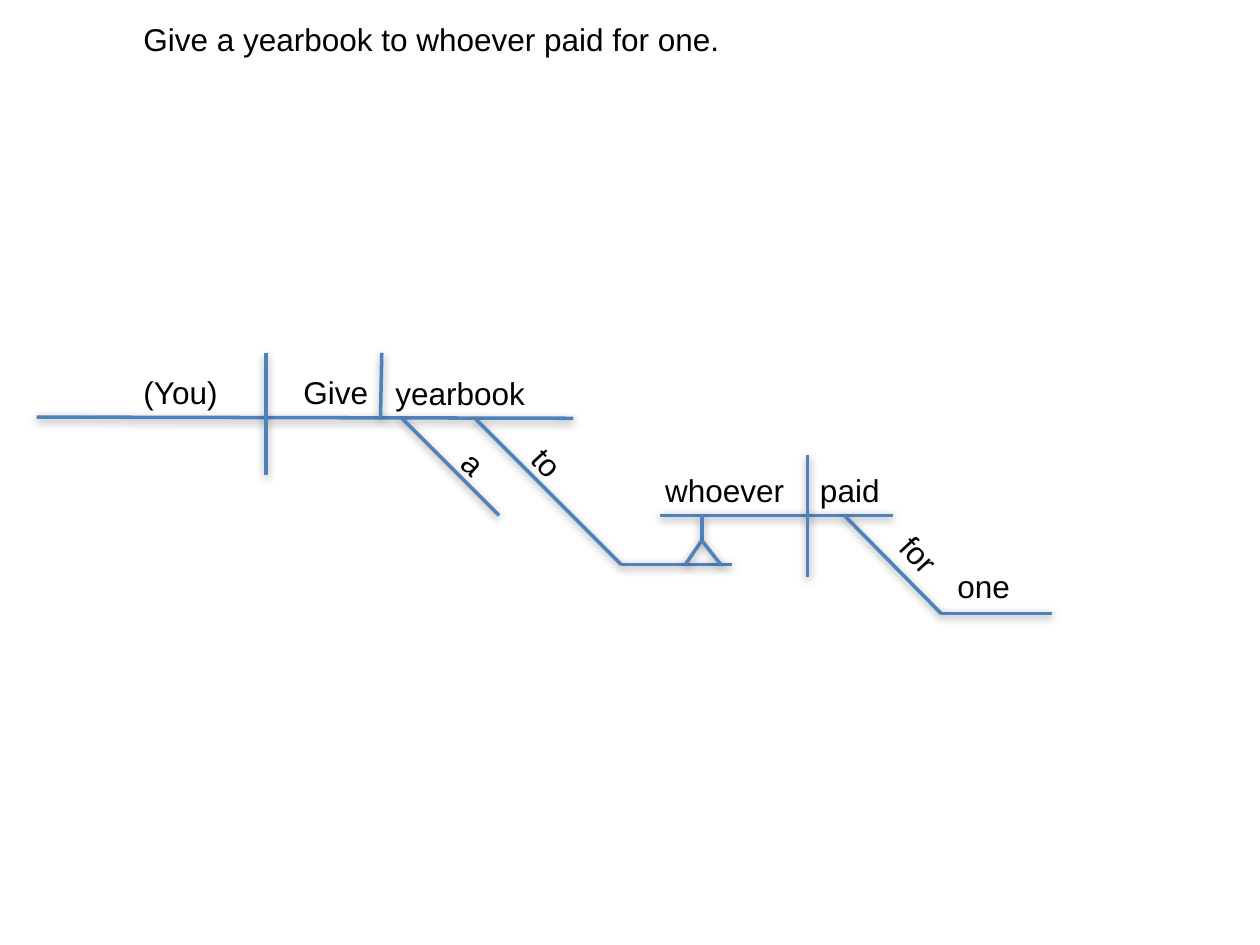
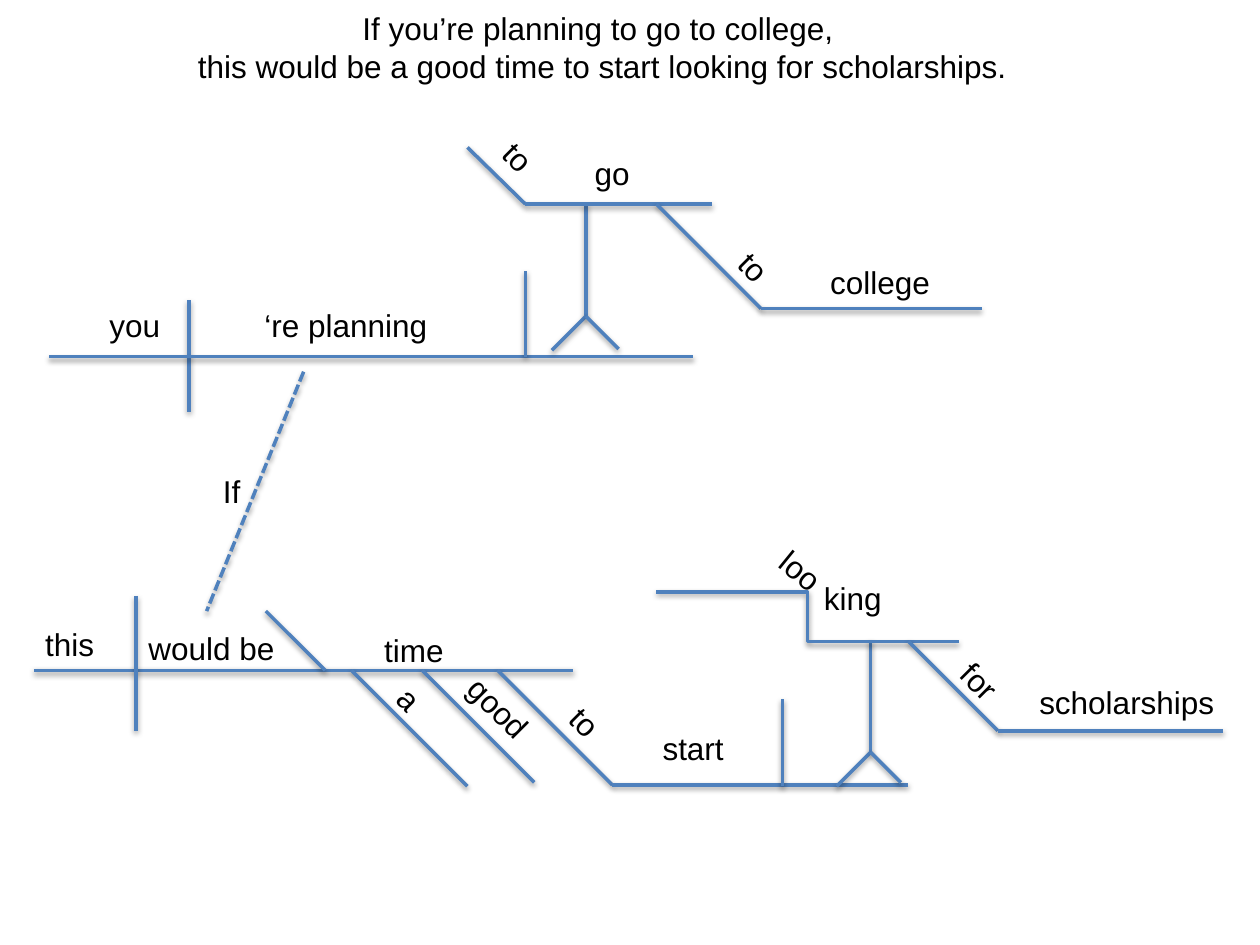
from itertools import pairwise

from lxml.etree import SubElement
from pptx import Presentation
from pptx.dml.color import RGBColor
from pptx.enum.dml import MSO_LINE
from pptx.enum.shapes import MSO_CONNECTOR
from pptx.enum.text import MSO_AUTO_SIZE, PP_ALIGN
from pptx.oxml.ns import qn
from pptx.util import Inches, Pt

# Shared look
FONT = "Arial"
SIZE = 18
INK = "000000"
BLUE = "4F81BD"
WEIGHT = 2
TALL = 0.4  # height of a one-line word box
SLANT = 45  # tilt of words on slanted lines


def color(code):
    return RGBColor.from_string(code)


def add_shade(link, blur):
    """Give a connector a soft shadow straight below it."""
    effects = SubElement(link._element.spPr, qn("a:effectLst"))
    shade = SubElement(effects, qn("a:outerShdw"), blurRad=str(Pt(blur)),
                       dist=str(Pt(1.6)), dir="5400000", rotWithShape="0")
    tint = SubElement(shade, qn("a:srgbClr"), val=INK)
    SubElement(tint, qn("a:alpha"), val="38000")


def add_line(slide, blur, start, end, kind=MSO_CONNECTOR.STRAIGHT, dash=None):
    ends = [Inches(n) for n in (*start, *end)]
    link = slide.shapes.add_connector(kind, *ends)
    link.line.color.rgb = color(BLUE)
    link.line.width = Pt(WEIGHT)
    if dash:
        link.line.dash_style = dash
    add_shade(link, blur)


def add_route(slide, blur, *points):
    """Join points in turn with straight lines."""
    for start, end in pairwise(points):
        add_line(slide, blur, start, end)


def add_stand(slide, blur, top, fork, left, right):
    """Draw a stem that splits into two feet."""
    add_route(slide, blur, top, fork, left)
    add_line(slide, blur, fork, right)


def add_text(slide, lines, x, y, wide, tall=TALL, tilt=0, align=PP_ALIGN.LEFT):
    box = slide.shapes.add_textbox(*map(Inches, (x, y, wide, tall)))
    box.rotation = tilt
    frame = box.text_frame
    frame.word_wrap = False
    frame.auto_size = MSO_AUTO_SIZE.SHAPE_TO_FIT_TEXT
    for i, text in enumerate(lines):
        para = frame.add_paragraph() if i else frame.paragraphs[0]
        para.alignment = align
        run = para.add_run()
        run.text = text
        run.font.name = FONT
        run.font.size = Pt(SIZE)
        run.font.color.rgb = color(INK)


def add_words(slide, words):
    """Place words given as text, left, top, width and, if any, tilt."""
    for text, x, y, wide, *tilt in words:
        add_text(slide, [text], x, y, wide, tilt=tilt[0] if tilt else 0)


def draw_gift(slide):
    blur = 5
    add_text(slide, ["Give a yearbook to whoever paid for one."], 1.04, 0.11, 4.82)

    # Main clause
    add_route(slide, blur, (0.29, 3.31), (4.55, 3.32))
    add_route(slide, blur, (2.11, 2.8), (2.11, 3.77))
    add_route(slide, blur, (3.03, 2.8), (3.02, 3.32))
    add_route(slide, blur, (3.19, 3.32), (3.96, 4.09))
    add_route(slide, blur, (3.77, 3.32), (4.93, 4.48), (5.81, 4.48))

    # Noun clause on its stand
    add_route(slide, blur, (5.24, 4.09), (7.09, 4.09))
    add_route(slide, blur, (6.41, 3.61), (6.41, 4.58))
    add_route(slide, blur, (6.7, 4.09), (7.47, 4.87), (8.35, 4.87))
    add_stand(slide, blur, (5.57, 4.09), (5.57, 4.29), (5.44, 4.48), (5.72, 4.48))

    add_words(slide, [
        ("(You)", 1.04, 2.91, 0.81),
        ("Give", 2.31, 2.91, 0.72),
        ("yearbook", 3.04, 2.92, 1.23),
        ("a", 3.59, 3.48, 0.34, 42.5),
        ("to", 4.14, 3.47, 0.41, 47.1),
        ("whoever", 5.18, 3.69, 1.15),
        ("paid", 6.41, 3.69, 0.67),
        ("for", 7.05, 4.2, 0.49, 47.1),
        ("one", 7.5, 4.45, 0.62),
    ])


def draw_college(slide):
    blur = 3.1

    # Main clause
    add_route(slide, blur, (0.27, 5.32), (4.55, 5.32))
    add_route(slide, blur, (1.08, 4.73), (1.08, 5.8))
    add_route(slide, blur, (2.11, 4.85), (2.58, 5.32))
    add_route(slide, blur, (2.79, 5.32), (3.71, 6.24))
    add_route(slide, blur, (3.35, 5.32), (4.24, 6.21))

    # Phrase "to start" with its gerund
    add_route(slide, blur, (3.95, 5.32), (4.86, 6.23), (7.21, 6.23))
    add_route(slide, blur, (6.21, 6.24), (6.21, 5.55))
    add_stand(slide, blur, (6.91, 5.08), (6.91, 5.97), (6.64, 6.24), (7.15, 6.21))
    add_line(slide, blur, (5.21, 4.7), (7.61, 5.09), MSO_CONNECTOR.ELBOW)
    add_route(slide, blur, (7.21, 5.09), (7.92, 5.8), (9.71, 5.8))

    # Clause with "if"
    add_route(slide, blur, (1.5, 3.27), (1.5, 2.38))
    add_route(slide, blur, (0.39, 2.83), (5.5, 2.83))
    add_route(slide, blur, (4.17, 2.83), (4.17, 2.15))
    add_stand(slide, blur, (4.65, 1.62), (4.65, 2.51), (4.38, 2.78), (4.91, 2.77))
    add_route(slide, blur, (3.71, 1.17), (4.17, 1.62), (5.65, 1.62))
    add_route(slide, blur, (5.21, 1.62), (6.04, 2.45), (7.79, 2.45))
    add_line(slide, blur, (2.41, 2.95), (1.64, 4.85), dash=MSO_LINE.SQUARE_DOT)

    add_words(slide, [
        ("you", 0.77, 2.38, 0.61),
        ("‘re planning", 2, 2.38, 1.51),
        ("to", 3.91, 1.05, 0.41, SLANT),
        ("go", 4.62, 1.17, 0.48),
        ("to", 5.78, 1.92, 0.41, SLANT),
        ("college", 6.49, 2.04, 1),
        ("this", 0.26, 4.91, 0.59),
        ("would be", 1.08, 4.94, 1.21),
        ("start", 5.16, 5.74, 0.69),
        ("a", 3.08, 5.35, 0.34, SLANT),
        ("good", 3.58, 5.42, 0.76, SLANT),
        ("to", 4.44, 5.53, 0.41, SLANT),
        ("time", 2.95, 4.96, 0.68),
        ("If", 1.67, 3.7, 0.34),
        ("loo", 6.09, 4.33, 0.54, 39.2),
        ("king", 6.44, 4.55, 0.66),
        ("for", 7.53, 5.21, 0.5, SLANT),
        ("scholarships", 8.15, 5.37, 1.6),
    ])
    add_text(slide, ["If you’re planning to go to college, ",
                     "this would be a good time to start looking for scholarships."],
             1.44, 0.02, 6.68, 0.71, align=PP_ALIGN.CENTER)


def main():
    deck = Presentation()
    deck.slide_width = Inches(10)
    deck.slide_height = Inches(7.5)
    for draw in (draw_gift, draw_college):
        draw(deck.slides.add_slide(deck.slide_layouts[6]))
    deck.save("out.pptx")


if __name__ == "__main__":
    main()
